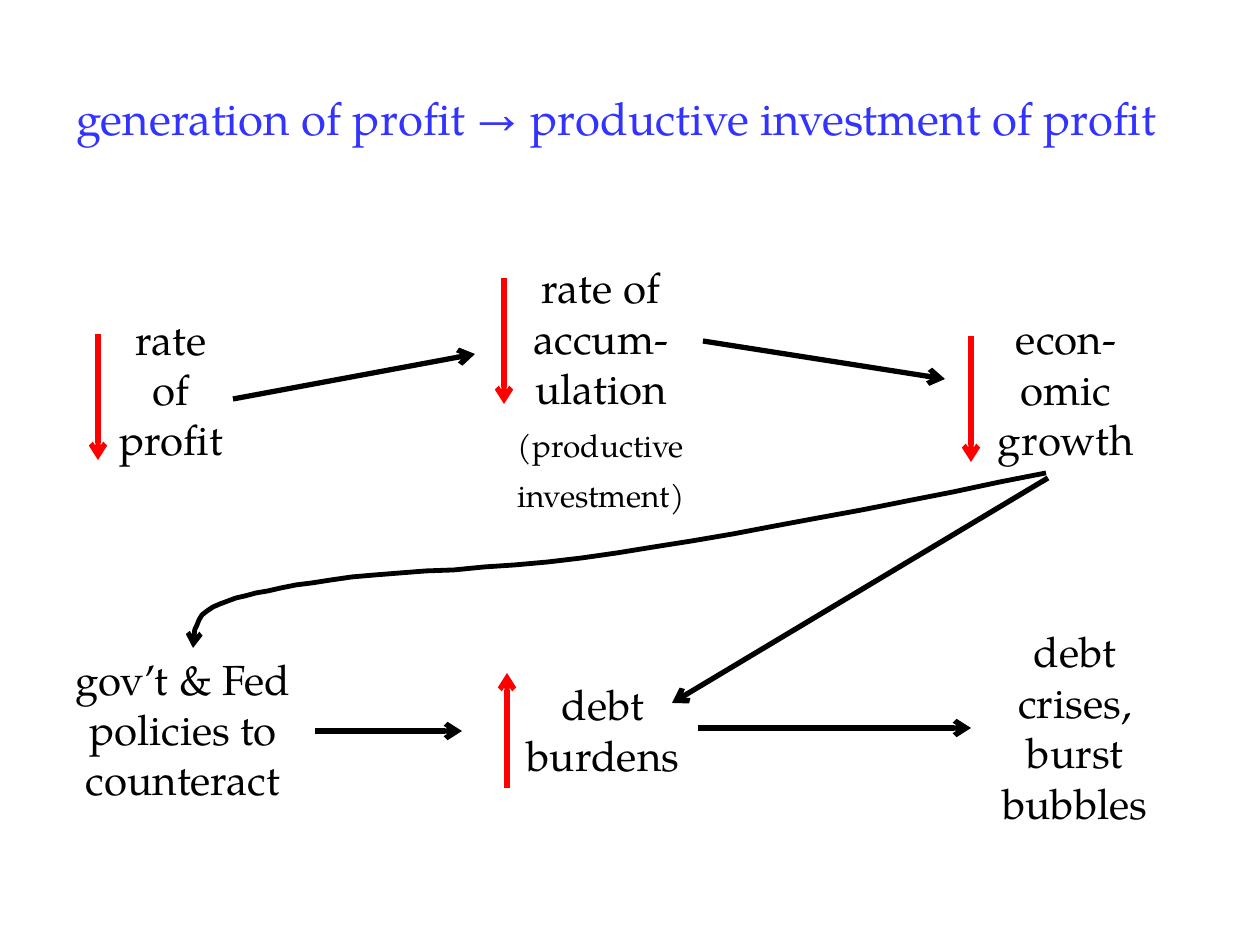
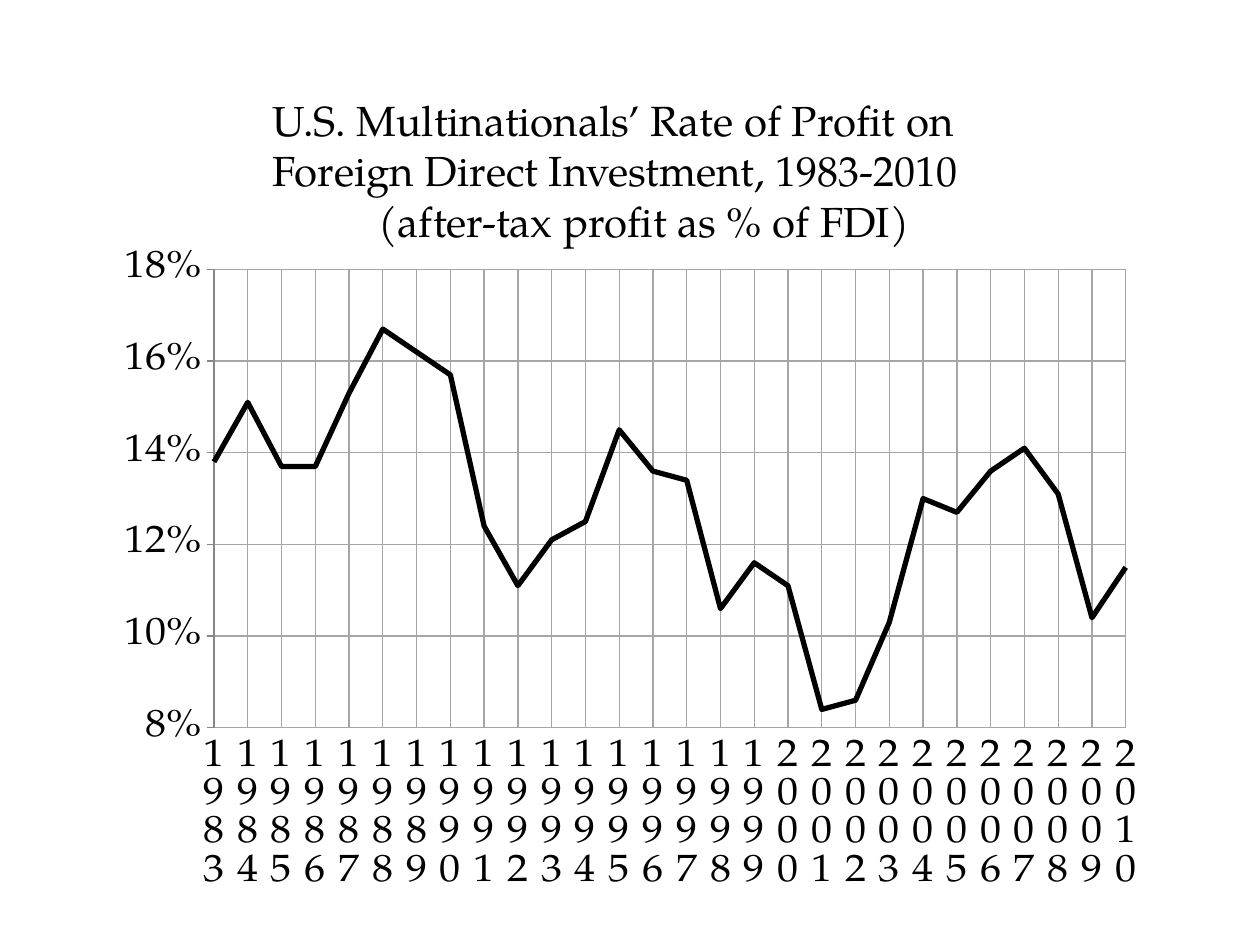
from dataclasses import dataclass
from typing import Any, Optional

from lxml import etree
from pptx import Presentation
from pptx import util as u
from pptx.chart import data as chart_data
from pptx.dml import color
from pptx.enum import chart as charts, shapes, text
from pptx.oxml import ns

SCALE = u.Inches(1) / 126
FONT = "TeX Gyre Pagella"
BLACK, RED, BLUE, GRID, WHITE = "000000", "FF0000", "3333FF", "A6A6A6", "FFFFFF"
LINE_PITCH = u.Pt(28.8)
TITLE_ONLY = 5

Point = tuple[int, int]


@dataclass(frozen=True)
class Label:
    name: str
    center: int
    top: int
    width: int
    height: int
    content: str
    note: str = ""


@dataclass(frozen=True)
class Arrow:
    start: Point
    end: Point
    color: str = BLACK
    begin_label: Optional[str] = None
    end_label: Optional[str] = None


@dataclass(frozen=True)
class Title:
    left: int
    top: int
    width: int
    height: int
    size: int
    color: str
    lines: tuple[tuple[str, int], ...]


FLOW_TITLE = Title(64, 84, 1145, 68, 26, BLUE, (
    ("generation of profit → productive investment of profit", 0),
))
CHART_TITLE = Title(219, 88, 882, 165, 24, BLACK, (
    ("U.S. Multinationals’ Rate of Profit on", 41),
    ("Foreign Direct Investment, 1983-2010", 41),
    ("(after-tax profit as % of FDI)", 147),
))

LABELS = (
    Label("profit", 171, 313, 124, 172, "rate\nof\nprofit"),
    Label("accumulation", 601, 262, 206, 252, "rate of\naccum-\nulation",
          "(productive\ninvestment)"),
    Label("growth", 1066, 313, 160, 152, "econ-\nomic\ngrowth"),
    Label("policies", 183, 653, 264, 156, "gov’t & Fed\npolicies to\ncounteract"),
    Label("debt", 603, 679, 190, 98, "debt\nburdens"),
    Label("crises", 1075, 626, 208, 204, "debt\ncrises,\nburst\nbubbles"),
)

ARROWS = (
    Arrow((98, 334), (98, 460), RED),
    Arrow((504, 278), (504, 404), RED),
    Arrow((971, 336), (971, 462), RED),
    Arrow((507, 788), (507, 673), RED),
    Arrow((233, 399), (475, 354), begin_label="profit"),
    Arrow((703, 341), (945, 379)),
    Arrow((1048, 478), (672, 703)),
    Arrow((315, 731), (462, 731), begin_label="policies"),
    Arrow((698, 728), (971, 728), begin_label="debt", end_label="crises"),
)

CURVE_START: Point = (1046, 473)
CURVE_SEGMENTS: tuple[tuple[Point, Point, Point], ...] = (
    ((891, 504), (736, 536), (617, 553)),
    ((498, 571), (398, 570), (331, 580)),
    ((265, 589), (236, 597), (213, 607)),
    ((190, 619), (195, 641), (193, 648)),
)
CURVE_STEPS = 10

YEARS = range(1983, 2011)
PROFIT_RATES = (
    0.138, 0.151, 0.137, 0.137, 0.153, 0.167, 0.162, 0.157, 0.124, 0.111,
    0.121, 0.125, 0.145, 0.136, 0.134, 0.106, 0.116, 0.111, 0.084, 0.086,
    0.103, 0.13, 0.127, 0.136, 0.141, 0.131, 0.104, 0.115,
)
PLOT_LAYOUT = {"layoutTarget": "inner", "xMode": "edge", "yMode": "edge",
               "x": 0.109, "y": 0.04, "w": 0.835, "h": 0.78}


def px(value: int) -> int:
    return round(value * SCALE)


def rgb(value: str) -> color.RGBColor:
    return color.RGBColor.from_string(value)


def apply(target: Any, values: dict[str, Any]) -> None:
    for name, value in values.items():
        setattr(target, name, value)


def set_font(font: Any, size: int, font_color: str = BLACK) -> None:
    apply(font, {"name": FONT, "size": u.Pt(size), "bold": False})
    font.color.rgb = rgb(font_color)


def set_line(line: Any, line_color: str, width: float) -> None:
    line.color.rgb = rgb(line_color)
    line.width = u.Pt(width)


def add_arrowhead(shape: Any) -> None:
    line = shape.line._get_or_add_ln()
    etree.SubElement(line, ns.qn("a:tailEnd"), type="arrow")


def add_titled_slide(presentation: Any, title: Title) -> Any:
    slide = presentation.slides.add_slide(presentation.slide_layouts[TITLE_ONLY])
    shape = slide.shapes.title
    apply(shape, {"left": px(title.left), "top": px(title.top),
                  "width": px(title.width), "height": px(title.height)})
    shape.fill.solid()
    shape.fill.fore_color.rgb = rgb(WHITE)
    frame = shape.text_frame
    frame.text = "\n".join(line for line, _ in title.lines)
    apply(frame, {"word_wrap": True, "auto_size": text.MSO_AUTO_SIZE.NONE,
                  "vertical_anchor": text.MSO_ANCHOR.TOP})
    for paragraph, (_, indent) in zip(frame.paragraphs, title.lines):
        paragraph.alignment = text.PP_ALIGN.LEFT
        paragraph._p.get_or_add_pPr().set("marL", str(px(indent)))
        set_font(paragraph.runs[0].font, title.size, title.color)
    return slide


def add_label(slide: Any, label: Label) -> Any:
    shape = slide.shapes.add_textbox(px(label.center - label.width // 2), px(label.top),
                                     px(label.width), px(label.height))
    frame = shape.text_frame
    apply(frame, {"word_wrap": True, "margin_left": 0, "margin_right": 0,
                  "margin_top": 0, "margin_bottom": 0})
    content_lines = label.content.split("\n")
    note_lines = label.note.split("\n") if label.note else []
    frame.text = "\n".join(content_lines + note_lines)
    for index, paragraph in enumerate(frame.paragraphs):
        is_note = index >= len(content_lines)
        paragraph.alignment = text.PP_ALIGN.CENTER
        set_font(paragraph.runs[0].font, 18 if is_note else 24)
        if is_note:
            paragraph.line_spacing = LINE_PITCH
    return shape


def add_arrow(slide: Any, arrow: Arrow, labels: dict[str, Any]) -> None:
    connector = slide.shapes.add_connector(
        shapes.MSO_CONNECTOR.STRAIGHT, *map(px, arrow.start + arrow.end))
    if arrow.begin_label:
        connector.begin_connect(labels[arrow.begin_label], 3)
    if arrow.end_label:
        connector.end_connect(labels[arrow.end_label], 1)
    set_line(connector.line, arrow.color, 3)
    add_arrowhead(connector)
    etree.SubElement(connector._element.spPr, ns.qn("a:effectLst"))


def curve_points() -> list[tuple[float, float]]:
    points = []
    start = CURVE_START
    for first, second, end in CURVE_SEGMENTS:
        for step in range(1, CURVE_STEPS + 1):
            t = step / CURVE_STEPS
            weights = ((1 - t) ** 3, 3 * t * (1 - t) ** 2, 3 * t * t * (1 - t), t ** 3)
            controls = (start, first, second, end)
            points.append((sum(w * x for w, (x, _) in zip(weights, controls)),
                           sum(w * y for w, (_, y) in zip(weights, controls))))
        start = end
    return points


def add_feedback_curve(slide: Any) -> None:
    builder = slide.shapes.build_freeform(*CURVE_START, scale=SCALE)
    builder.add_line_segments(curve_points(), close=False)
    shape = builder.convert_to_shape()
    shape.shadow.inherit = False
    shape.fill.background()
    set_line(shape.line, BLACK, 2.75)
    add_arrowhead(shape)


def set_plot_layout(chart: Any) -> None:
    plot_area = chart._chartSpace.chart.plotArea
    for old in plot_area.findall(ns.qn("c:layout")):
        plot_area.remove(old)
    layout = etree.Element(ns.qn("c:layout"))
    manual = etree.SubElement(layout, ns.qn("c:manualLayout"))
    for name, value in PLOT_LAYOUT.items():
        etree.SubElement(manual, ns.qn(f"c:{name}"), val=str(value))
    plot_area.insert(0, layout)


def start_line_on_axis(value_axis: Any) -> None:
    element = value_axis._element
    for old in element.findall(ns.qn("c:crossBetween")):
        element.remove(old)
    cross_between = etree.Element(ns.qn("c:crossBetween"), val="midCat")
    element.find(ns.qn("c:crosses")).addnext(cross_between)


def add_profit_chart(slide: Any) -> None:
    data = chart_data.CategoryChartData(number_format="0%")
    data.categories = [str(year) for year in YEARS]
    data.add_series("Series 1", PROFIT_RATES)
    chart = slide.shapes.add_chart(charts.XL_CHART_TYPE.LINE, px(95), px(246),
                                   px(1092), px(646), data).chart
    apply(chart, {"has_legend": False, "has_title": False})
    set_font(chart.font, 10)
    set_plot_layout(chart)

    plot = chart.plots[0]
    plot.vary_by_categories = False
    series = plot.series[0]
    series.smooth = False
    series.marker.style = charts.XL_MARKER_STYLE.NONE
    set_line(series.format.line, BLACK, 3)

    for axis in (chart.category_axis, chart.value_axis):
        apply(axis, {"has_major_gridlines": True,
                     "major_tick_mark": charts.XL_TICK_MARK.OUTSIDE,
                     "minor_tick_mark": charts.XL_TICK_MARK.NONE})
        set_line(axis.major_gridlines.format.line, GRID, 0.75)
        set_font(axis.tick_labels.font, 24)

    category_axis = chart.category_axis
    category_axis.tick_label_position = charts.XL_TICK_LABEL_POSITION.LOW
    category_axis.format.line.fill.background()
    label_body = category_axis._element.find(f"{ns.qn('c:txPr')}/{ns.qn('a:bodyPr')}")
    apply_attributes = {"rot": "0", "vert": "wordArtVert"}
    for name, value in apply_attributes.items():
        label_body.set(name, value)

    value_axis = chart.value_axis
    apply(value_axis, {"minimum_scale": 0.08, "maximum_scale": 0.18, "major_unit": 0.02})
    apply(value_axis.tick_labels, {"number_format": "0%", "number_format_is_linked": False})
    start_line_on_axis(value_axis)


def main() -> None:
    presentation = Presentation()
    apply(presentation, {"slide_width": px(1260), "slide_height": px(945)})

    flow_slide = add_titled_slide(presentation, FLOW_TITLE)
    labels = {label.name: add_label(flow_slide, label) for label in LABELS}
    for arrow in ARROWS:
        add_arrow(flow_slide, arrow, labels)
    add_feedback_curve(flow_slide)

    chart_slide = add_titled_slide(presentation, CHART_TITLE)
    add_profit_chart(chart_slide)

    presentation.save("out.pptx")


if __name__ == "__main__":
    main()
